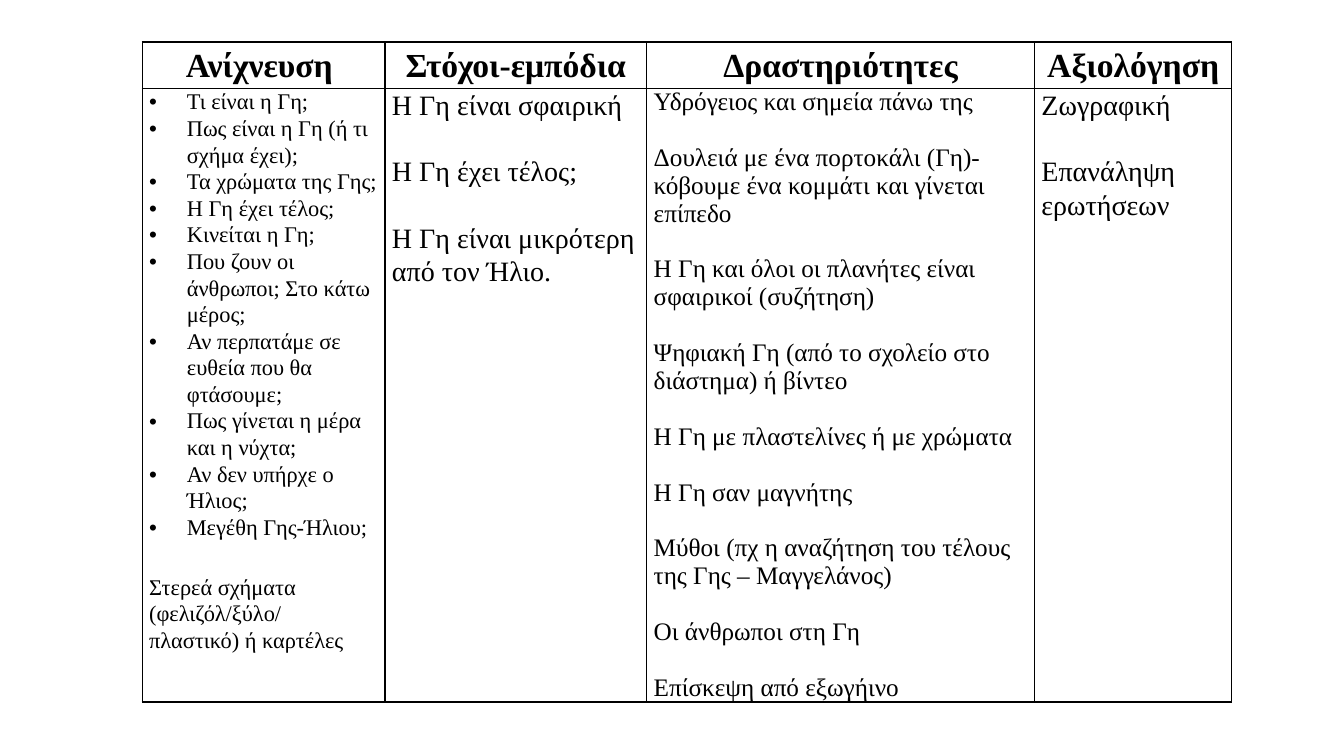
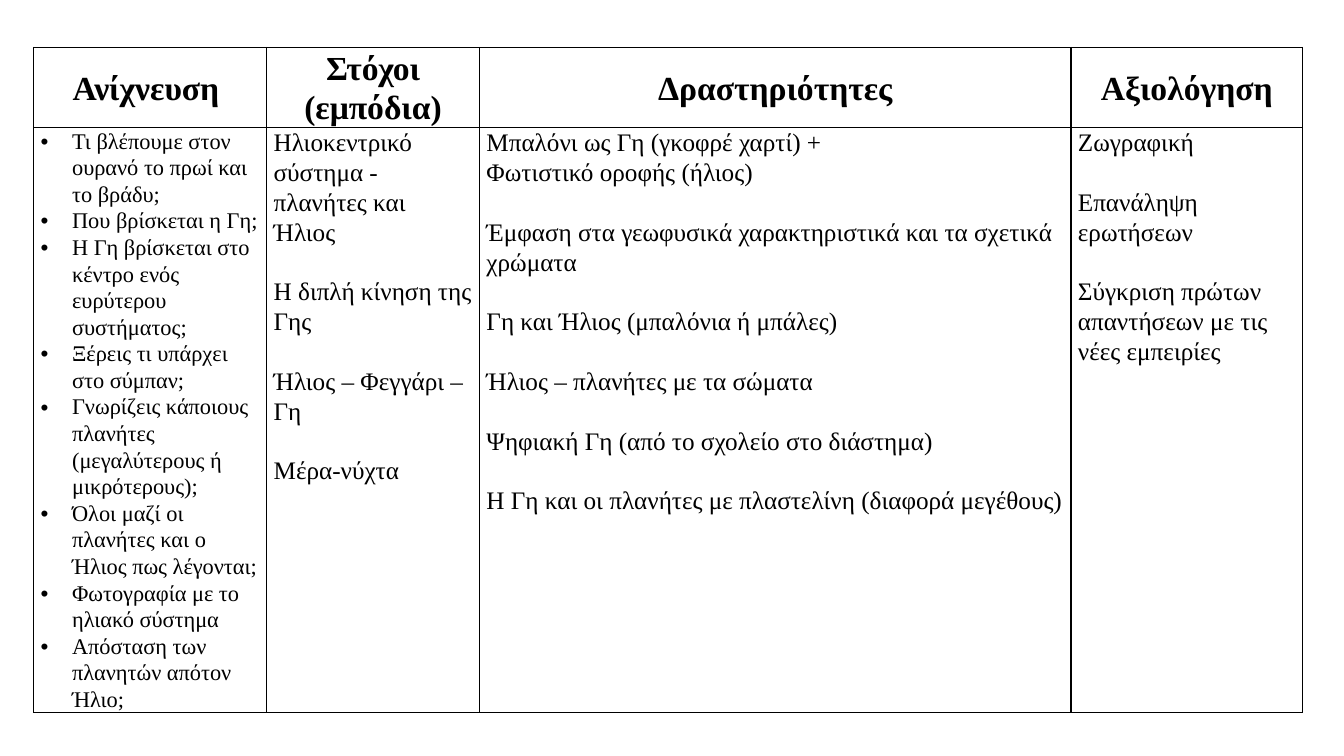
from dataclasses import dataclass

from lxml import etree
from pptx import Presentation
from pptx.dml.color import RGBColor
from pptx.enum.text import MSO_ANCHOR, PP_ALIGN
from pptx.oxml.ns import qn
from pptx.util import Pt

FONT = "Times New Roman"
BLACK = "000000"
CENTER = PP_ALIGN.CENTER
LEFT = PP_ALIGN.LEFT
MIDDLE = MSO_ANCHOR.MIDDLE
TOP = MSO_ANCHOR.TOP
BLANK_LAYOUT = 6
SPACING = 1.07
MARGINS = {"margin_left": Pt(5), "margin_right": Pt(5),
           "margin_top": Pt(0), "margin_bottom": Pt(0)}
HEADER = {"size": Pt(24), "bold": True, "name": FONT}


@dataclass
class Column:
    """One table column; its text is in groups parted by a gap in points."""
    width: float
    header: str
    groups: list
    size: float
    gap: float = 0
    spacing: float = SPACING
    bullet_indent: float = 0  # bullets apply to the first group


def rgb(value):
    return RGBColor.from_string(value)


def apply(target, values):
    for name, value in values.items():
        setattr(target, name, value)


def add_borders(cell):
    tcPr = cell._tc.get_or_add_tcPr()
    for side in ("lnL", "lnR", "lnT", "lnB"):
        ln = etree.SubElement(tcPr, qn("a:" + side), w=str(Pt(1)))
        fill = etree.SubElement(ln, qn("a:solidFill"))
        etree.SubElement(fill, qn("a:srgbClr"), val=BLACK)


def add_bullet(p, indent):
    pPr = p._p.get_or_add_pPr()
    pPr.set("marL", str(Pt(indent)))
    pPr.set("indent", str(-Pt(indent)))
    etree.SubElement(pPr, qn("a:buFont"), typeface="Arial")
    etree.SubElement(pPr, qn("a:buChar"), char="•")


def write(p, text, font, align=LEFT, spacing=SPACING, before=0):
    apply(p, {"alignment": align, "line_spacing": spacing,
              "space_before": Pt(before)})
    r = p.add_run()
    r.text = text
    apply(r.font, font)
    r.font.color.rgb = rgb(BLACK)


def format_cell(cell, anchor):
    add_borders(cell)
    cell.fill.background()
    apply(cell, {**MARGINS, "vertical_anchor": anchor})


def fill_body(cell, column):
    tf = cell.text_frame
    font = {"size": Pt(column.size), "bold": False, "name": FONT}
    for g, group in enumerate(column.groups):
        for i, text in enumerate(group):
            p = tf.paragraphs[0] if g == i == 0 else tf.add_paragraph()
            before = column.gap if g and i == 0 else 0
            write(p, text, font, spacing=column.spacing, before=before)
            if column.bullet_indent and g == 0:
                add_bullet(p, column.bullet_indent)


def add_plan_slide(prs, left, top, heights, columns):
    """Add a slide with one lesson-plan table: a header row and a body row."""
    slide = prs.slides.add_slide(prs.slide_layouts[BLANK_LAYOUT])
    width = sum(column.width for column in columns)
    table = slide.shapes.add_table(2, len(columns), Pt(left), Pt(top),
                                   Pt(width), Pt(sum(heights))).table
    apply(table, {"first_row": False, "horz_banding": False})
    for row, height in zip(table.rows, heights):
        row.height = Pt(height)
    for i, column in enumerate(columns):
        table.columns[i].width = Pt(column.width)
        head, body = table.cell(0, i), table.cell(1, i)
        format_cell(head, MIDDLE)
        write(head.text_frame.paragraphs[0], column.header, HEADER, CENTER)
        format_cell(body, TOP)
        fill_body(body, column)


EARTH_PLAN = [
    Column(173.5, "Ανίχνευση ", [
        ["Τι είναι η Γη;",
         "Πως είναι η Γη (ή τι σχήμα έχει);",
         "Τα χρώματα της Γης;",
         "Η Γη έχει τέλος;",
         "Κινείται η Γη;",
         "Που ζουν οι άνθρωποι; Στο κάτω μέρος;",
         "Αν περπατάμε σε ευθεία που θα φτάσουμε;",
         "Πως γίνεται η μέρα και η νύχτα;",
         "Αν δεν υπήρχε ο Ήλιος;",
         "Μεγέθη Γης-Ήλιου;"],
        ["Στερεά σχήματα (φελιζόλ/ξύλο/", "πλαστικό) ή καρτέλες"],
    ], size=16, gap=23.8, bullet_indent=27),
    Column(187, "Στόχοι-εμπόδια", [
        ["Η Γη είναι σφαιρική"],
        ["Η Γη έχει τέλος;"],
        ["Η Γη είναι μικρότερη από τον Ήλιο."],
    ], size=20, gap=23.8),
    Column(277, "Δραστηριότητες", [
        ["Υδρόγειος και σημεία πάνω της"],
        ["Δουλειά με ένα πορτοκάλι (Γη)-κόβουμε ένα κομμάτι και γίνεται "
         "επίπεδο"],
        ["Η Γη και όλοι οι πλανήτες είναι σφαιρικοί (συζήτηση)"],
        ["Ψηφιακή Γη (από το σχολείο στο διάστημα) ή βίντεο"],
        ["Η Γη με πλαστελίνες ή με χρώματα"],
        ["Η Γη σαν μαγνήτης"],
        ["Μύθοι (πχ η αναζήτηση του τέλους της Γης – Μαγγελάνος)"],
        ["Οι άνθρωποι στη Γη"],
        ["Επίσκεψη από εξωγήινο"],
    ], size=18, gap=19.9, spacing=1.0),
    Column(141, "Αξιολόγηση", [
        ["Ζωγραφική"],
        ["Επανάληψη ερωτήσεων"],
    ], size=20, gap=23.8),
]

SOLAR_SYSTEM_PLAN = [
    Column(166.5, "Ανίχνευση ", [
        ["Τι βλέπουμε στον ουρανό το πρωί και το βράδυ;",
         "Που βρίσκεται η Γη;",
         "Η Γη βρίσκεται στο κέντρο ενός ευρύτερου συστήματος;",
         "Ξέρεις τι υπάρχει στο σύμπαν;",
         "Γνωρίζεις κάποιους πλανήτες (μεγαλύτερους ή μικρότερους);",
         "Όλοι μαζί οι πλανήτες και ο Ήλιος πως λέγονται;",
         "Φωτογραφία με το ηλιακό σύστημα",
         "Απόσταση των πλανητών απότον Ήλιο;"],
    ], size=16, bullet_indent=22.5),
    Column(152, "Στόχοι (εμπόδια)", [
        ["Ηλιοκεντρικό σύστημα - πλανήτες και Ήλιος"],
        ["Η διπλή κίνηση της Γης"],
        ["Ήλιος – Φεγγάρι – Γη"],
        ["Μέρα-νύχτα"],
    ], size=18, gap=21.3),
    Column(422.5, "Δραστηριότητες", [
        ["Μπαλόνι ως Γη (γκοφρέ χαρτί) +", "Φωτιστικό οροφής (ήλιος)"],
        ["Έμφαση στα γεωφυσικά χαρακτηριστικά και τα σχετικά χρώματα"],
        ["Γη και Ήλιος (μπαλόνια ή μπάλες)"],
        ["Ήλιος – πλανήτες με τα σώματα"],
        ["Ψηφιακή Γη (από το σχολείο στο διάστημα)"],
        ["Η Γη και οι πλανήτες με πλαστελίνη (διαφορά μεγέθους)"],
    ], size=18, gap=21.3),
    Column(165.5, "Αξιολόγηση", [
        ["Ζωγραφική"],
        ["Επανάληψη ερωτήσεων"],
        ["Σύγκριση πρώτων απαντήσεων με τις νέες εμπειρίες"],
    ], size=18, gap=21.3),
]


def main():
    prs = Presentation()
    apply(prs, {"slide_width": Pt(960), "slide_height": Pt(540)})
    add_plan_slide(prs, 101.5, 30, (33, 438.5), EARTH_PLAN)
    add_plan_slide(prs, 24, 34, (57, 417.5), SOLAR_SYSTEM_PLAN)
    prs.save("out.pptx")


if __name__ == "__main__":
    main()
